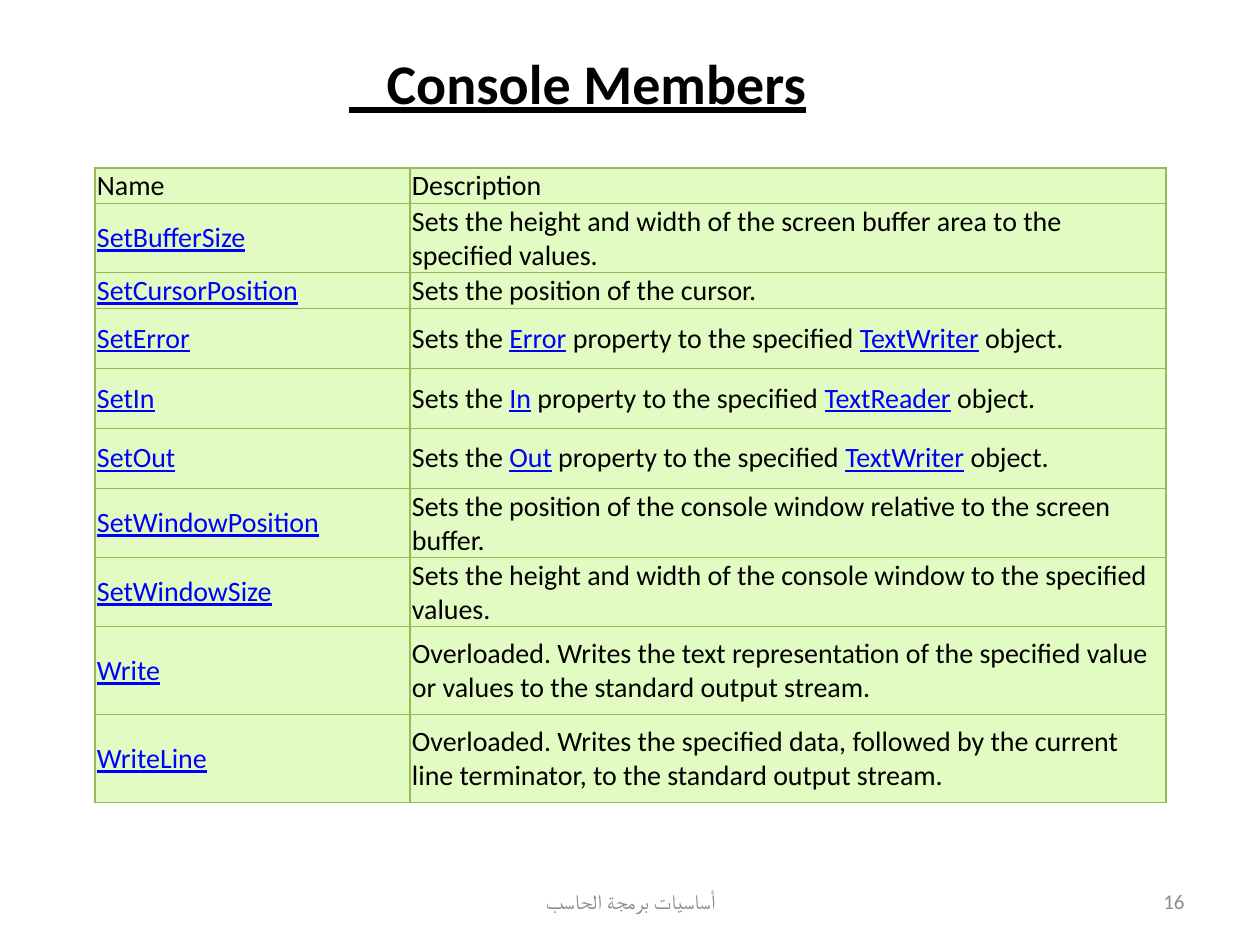
from dataclasses import dataclass

from lxml import etree
from pptx import Presentation
from pptx import util as u
from pptx.dml import color
from pptx.enum import text
from pptx.oxml import ns

SCALE = 914400 / 126
FONT = "Calibri"
HUES = {"ink": "000000", "link": "0000FF", "foot": "8C8C8C", "cell": "E2FBC2", "edge": "98B955"}
MARK = "|"


@dataclass
class Box:
    left: int
    top: int
    width: int
    height: int


@dataclass
class Row:
    name: str
    note: str
    height: int


ROWS = [
    Row("Name", "Description", 32),
    Row("|SetBufferSize|", "Sets the height and width of the screen buffer area to the specified values.", 60),
    Row("|SetCursorPosition|", "Sets the position of the cursor.", 32),
    Row("|SetError|", "Sets the |Error| property to the specified |TextWriter| object.", 60),
    Row("|SetIn|", "Sets the |In| property to the specified |TextReader| object.", 60),
    Row("|SetOut|", "Sets the |Out| property to the specified |TextWriter| object.", 60),
    Row("|SetWindowPosition|", "Sets the position of the console window relative to the screen buffer.", 60),
    Row("|SetWindowSize|", "Sets the height and width of the console window to the specified values.", 60),
    Row("|Write|", "Overloaded. Writes the text representation of the specified value "
        "or values to the standard output stream.", 88),
    Row("|WriteLine|", "Overloaded. Writes the specified data, followed by the current "
        "line terminator, to the standard output stream.", 88),
]
COLS = [315, 756]
GRID = Box(95, 168, sum(COLS), sum(row.height for row in ROWS))


def px(count: int) -> int:
    return u.Emu(round(count * SCALE))


def area(box: Box) -> list[int]:
    return [px(n) for n in (box.left, box.top, box.width, box.height)]


def write(frame, words: str, size: int, hue: str = "ink", bold: bool = False,
          line: bool = False, align=text.PP_ALIGN.LEFT, anchor=text.MSO_ANCHOR.MIDDLE) -> None:
    frame.word_wrap = True
    frame.vertical_anchor = anchor
    para = frame.paragraphs[0]
    para.alignment = align
    for index, part in enumerate(words.split(MARK)):
        if not part:
            continue
        link = index % 2 == 1
        run = para.add_run()
        run.text = part
        font = run.font
        font.name, font.size, font.bold = FONT, u.Pt(size), bold
        font.underline = line or link
        font.color.rgb = color.RGBColor.from_string(HUES["link" if link else hue])


def edge(cell) -> None:
    props = cell._tc.get_or_add_tcPr()
    for side in ("lnL", "lnR", "lnT", "lnB"):
        line = etree.SubElement(props, ns.qn(f"a:{side}"), w=str(u.Pt(0.75)))
        fill = etree.SubElement(line, ns.qn("a:solidFill"))
        etree.SubElement(fill, ns.qn("a:srgbClr"), val=HUES["edge"])


def draw_cell(cell, words: str) -> None:
    cell.margin_left = cell.margin_right = px(2)
    cell.margin_top = cell.margin_bottom = px(1)
    edge(cell)
    cell.fill.solid()
    cell.fill.fore_color.rgb = color.RGBColor.from_string(HUES["cell"])
    cell.vertical_anchor = text.MSO_ANCHOR.MIDDLE
    write(cell.text_frame, words, 16, anchor=None)


def draw_grid(slide) -> None:
    table = slide.shapes.add_table(len(ROWS), len(COLS), *area(GRID)).table
    table.first_row = table.horz_banding = False
    for col, width in zip(table.columns, COLS):
        col.width = px(width)
    for line, row in zip(table.rows, ROWS):
        line.height = px(row.height)
        for cell, words in zip(line.cells, (row.name, row.note)):
            draw_cell(cell, words)


def draw_title(slide) -> None:
    title = slide.shapes.title
    title.left, title.top, title.width, title.height = area(Box(336, 42, 577, 81))
    title.text_frame.auto_size = text.MSO_AUTO_SIZE.SHAPE_TO_FIT_TEXT
    write(title.text_frame, "   Console Members", 32, bold=True, line=True, anchor=text.MSO_ANCHOR.TOP)


def draw_foot(slide, box: Box, words: str, align) -> None:
    shape = slide.shapes.add_textbox(*area(box))
    write(shape.text_frame, words, 12, hue="foot", align=align)


def main() -> None:
    deck = Presentation()
    deck.slide_width, deck.slide_height = px(1260), px(945)
    slide = deck.slides.add_slide(deck.slide_layouts[5])
    draw_foot(slide, Box(431, 876, 399, 50), "أساسيات برمجة الحاسب", text.PP_ALIGN.CENTER)
    draw_foot(slide, Box(903, 876, 294, 50), "16", text.PP_ALIGN.RIGHT)
    draw_grid(slide)
    draw_title(slide)
    deck.save("out.pptx")


if __name__ == "__main__":
    main()
